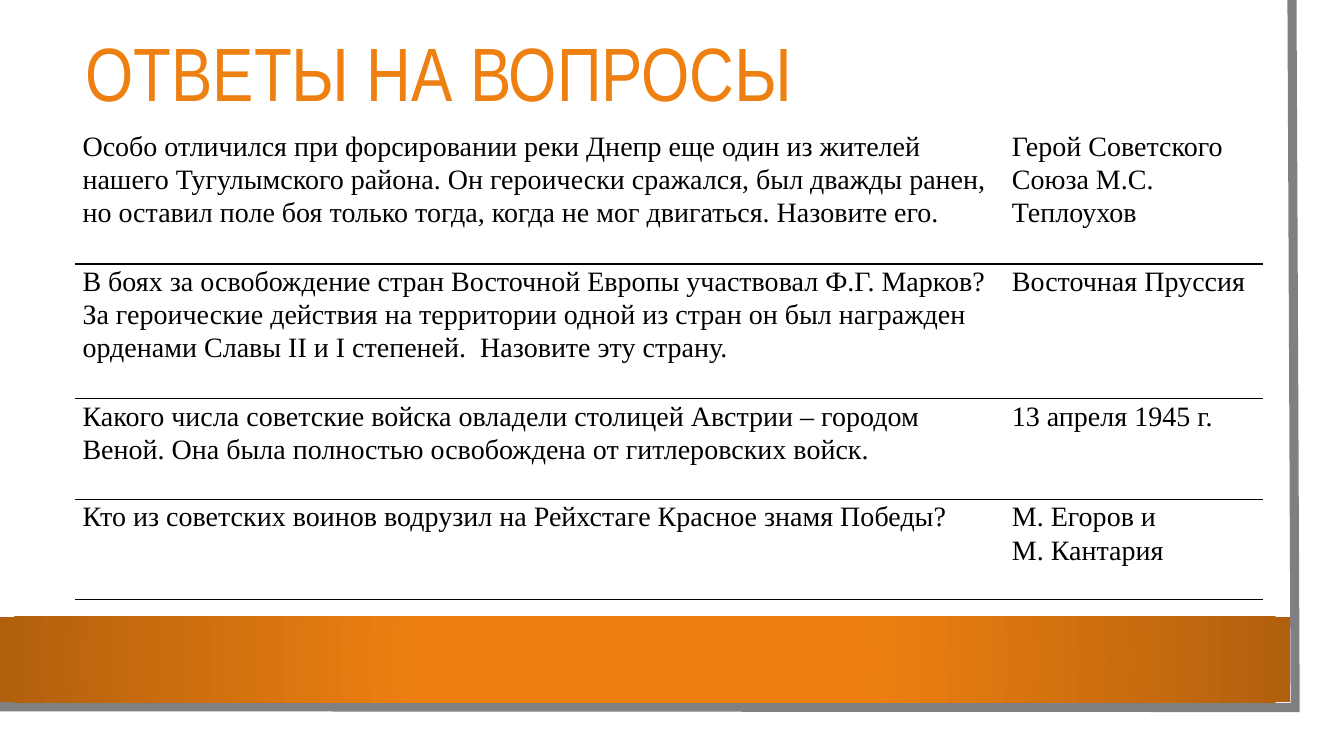
from lxml.etree import SubElement
from pptx import Presentation
from pptx.dml.color import RGBColor
from pptx.enum.shapes import MSO_SHAPE
from pptx.enum.text import MSO_ANCHOR, MSO_AUTO_SIZE, PP_ALIGN
from pptx.oxml import parse_xml
from pptx.oxml.ns import qn
from pptx.util import Cm, Pt

WHITE = RGBColor(0xFF, 0xFF, 0xFF)
BLACK = RGBColor(0x00, 0x00, 0x00)
GRAY = RGBColor(0x80, 0x80, 0x80)
ORANGE = RGBColor(0xEE, 0x80, 0x11)
BROWN = RGBColor(0xB2, 0x60, 0x0D)

NAMESPACE = 'xmlns:a="http://schemas.openxmlformats.org/drawingml/2006/main"'
PLAIN_TABLE_STYLE = "{2D5ABB26-0587-4C30-8999-92F81FD0307C}"

TITLE = "ОТВЕТЫ НА ВОПРОСЫ"
TITLE_FONT = {"name": "Arial Narrow", "size": Pt(54)}
CELL_FONT = {"name": "Times New Roman", "size": Pt(20)}
CELL_FORMAT = {
    "margin_left": Cm(0.18), "margin_right": Cm(0.18),
    "margin_top": 0, "margin_bottom": 0,
    "vertical_anchor": MSO_ANCHOR.TOP,
}

COLUMN_WIDTHS = (23.42, 6.5)
# Row height, question, answer
ROWS = (
    (3.4,
     "Особо отличился при форсировании реки Днепр еще один из жителей нашего "
     "Тугулымского района. Он героически сражался, был дважды ранен, но оставил "
     "поле боя только тогда, когда не мог двигаться. Назовите его.",
     "Герой Советского Союза М.С. Теплоухов"),
    (3.4,
     "В боях за освобождение стран Восточной Европы участвовал Ф.Г. Марков? "
     "За героические действия на территории одной из стран он был награжден "
     "орденами Славы II и I степеней.  Назовите эту страну.",
     "Восточная Пруссия"),
    (2.54,
     "Какого числа советские войска овладели столицей Австрии – городом Веной. "
     "Она была полностью освобождена от гитлеровских войск.",
     "13 апреля 1945 г."),
    (2.51,
     "Кто из советских воинов водрузил на Рейхстаге Красное знамя Победы?",
     "М. Егоров и\nМ. Кантария"),
)


def set_format(target, values):
    for name, value in values.items():
        setattr(target, name, value)


def add_block(page, box, color):
    block = page.shapes.add_shape(MSO_SHAPE.RECTANGLE, *map(Cm, box))
    block.shadow.inherit = False
    block.fill.solid()
    block.fill.fore_color.rgb = color
    block.line.fill.background()
    return block


def add_backdrop(page, box):
    left, top, width, height = box
    add_block(page, box, WHITE)

    # Gray edge along the right and the bottom
    right, bottom = left + width - 0.63, top + height - 0.64
    builder = page.shapes.build_freeform(Cm(right - 0.08), Cm(top))
    builder.add_line_segments(
        [(Cm(right), Cm(bottom)), (Cm(left - 0.08), Cm(bottom - 0.02))], close=False)
    edge = builder.convert_to_shape()
    edge.shadow.inherit = False
    edge.fill.background()
    edge.line.color.rgb = GRAY
    edge.line.width = Pt(6.5)
    SubElement(edge.line._get_or_add_ln(), qn("a:miter"), lim="800000")

    # Orange band with a radial gradient
    band = add_block(page, (left, bottom - 2.29, right - 0.13 - left, 2.16), ORANGE)
    gradient = parse_xml(
        f'<a:gradFill {NAMESPACE} rotWithShape="1"><a:gsLst>'
        f'<a:gs pos="34000"><a:srgbClr val="{ORANGE}"/></a:gs>'
        f'<a:gs pos="100000"><a:srgbClr val="{BROWN}"/></a:gs></a:gsLst>'
        '<a:path path="circle"><a:fillToRect l="50000" t="50000" r="50000" b="50000"/>'
        '</a:path></a:gradFill>')
    properties = band.fill._xPr
    properties.replace(properties.find(qn("a:solidFill")), gradient)


def add_title(page, box):
    title = page.shapes.title
    set_format(title, dict(zip(("left", "top", "width", "height"), map(Cm, box))))
    set_format(title.text_frame, {
        "text": TITLE, "word_wrap": True,
        "auto_size": MSO_AUTO_SIZE.NONE, "vertical_anchor": MSO_ANCHOR.MIDDLE})
    para = title.text_frame.paragraphs[0]
    set_format(para, {"alignment": PP_ALIGN.LEFT, "line_spacing": 0.9})
    set_format(para.font, TITLE_FONT)
    para.font.color.rgb = ORANGE


def fill_cell(cell, text):
    cell.text = text
    set_format(cell, CELL_FORMAT)
    cell.fill.background()
    for para in cell.text_frame.paragraphs:
        para.line_spacing = 1.07
        for span in para.runs:
            set_format(span.font, CELL_FONT)
            span.font.color.rgb = BLACK
    # Rule below the cell
    rule = parse_xml(
        f'<a:lnB {NAMESPACE} w="{Pt(1)}"><a:solidFill><a:srgbClr val="{BLACK}"/>'
        '</a:solidFill></a:lnB>')
    cell._tc.get_or_add_tcPr().insert(0, rule)


def add_answers(page, box):
    frame = page.shapes.add_table(len(ROWS), len(COLUMN_WIDTHS), *map(Cm, box))
    table = frame.table
    set_format(table, {"first_row": False, "horz_banding": False})
    table._tbl.tblPr.find(qn("a:tableStyleId")).text = PLAIN_TABLE_STYLE
    for column, width in zip(table.columns, COLUMN_WIDTHS):
        column.width = Cm(width)
    for row, (height, *texts) in zip(table.rows, ROWS):
        row.height = Cm(height)
        for cell, text in zip(row.cells, texts):
            fill_cell(cell, text)


def main():
    deck = Presentation()
    deck.slide_width, deck.slide_height = Cm(33.87), Cm(19.05)
    page = deck.slides.add_slide(deck.slide_layouts[5])
    add_backdrop(page, (0, 0, 33.27, 18.47))
    add_title(page, (1.9, 0.33, 28.88, 3.2))
    add_answers(page, (1.9, 3.25, sum(COLUMN_WIDTHS), sum(row[0] for row in ROWS)))
    # Title above the backdrop
    page.shapes._spTree.append(page.shapes.title._element)
    deck.save("out.pptx")


if __name__ == "__main__":
    main()
